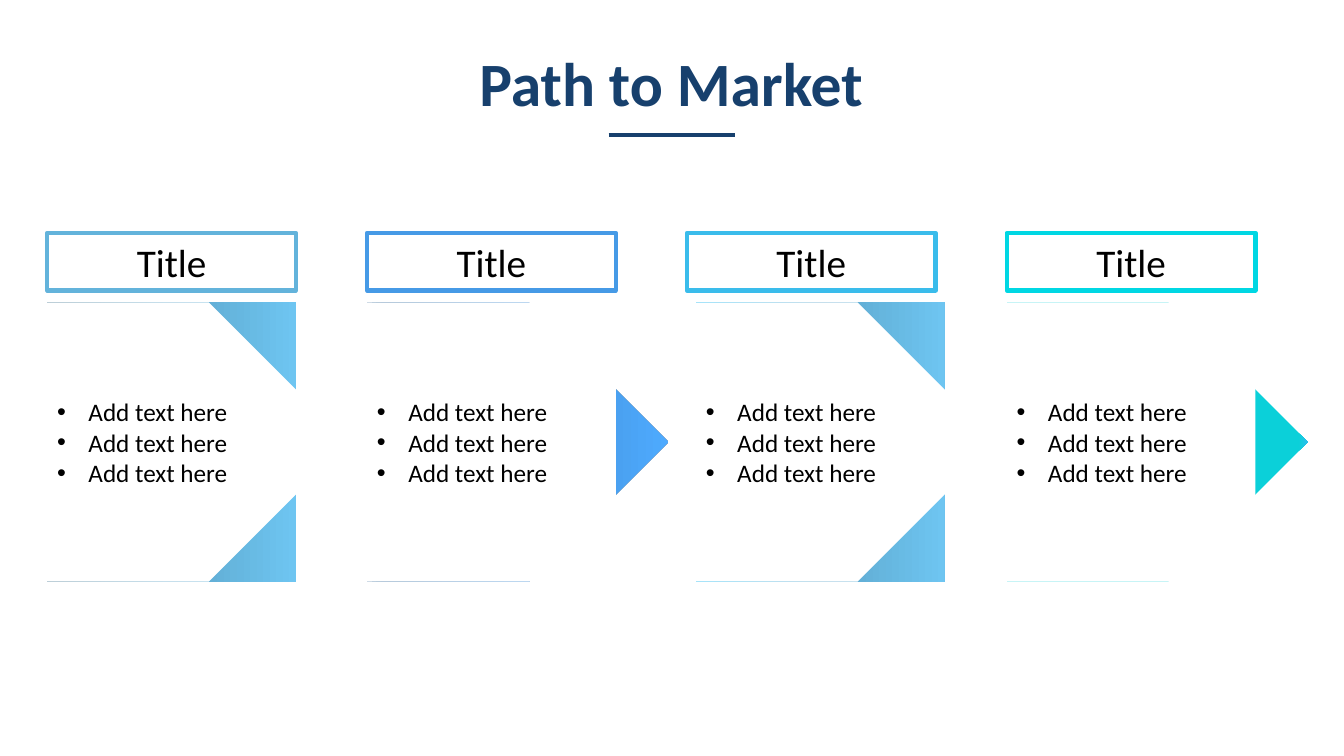
from lxml import etree
from pptx import Presentation
from pptx.dml.color import RGBColor
from pptx.enum.shapes import MSO_CONNECTOR, MSO_SHAPE
from pptx.enum.text import MSO_ANCHOR, MSO_AUTO_SIZE, PP_ALIGN
from pptx.oxml.ns import qn
from pptx.util import Cm, Pt

RECTANGLE, PENTAGON = MSO_SHAPE.RECTANGLE, MSO_SHAPE.PENTAGON
LEFT, CENTER = PP_ALIGN.LEFT, PP_ALIGN.CENTER
TOP, MIDDLE = MSO_ANCHOR.TOP, MSO_ANCHOR.MIDDLE

FONT = "Calibri"
COLORS = {"navy": "17406D", "black": "000000", "white": "FFFFFF"}

HEADING = "Path to Market"
BULLETS = ["Add text here"] * 3
# Each stage: title, border colour, body shift in cm, white cover shape, gradient stops
STAGES = [
    ("Title", "63B3DB", 0, PENTAGON, [(0, "41758F"), (50, "5DA6CB"), (100, "6EC5F1")]),
    ("Title", "469AE6", 0, RECTANGLE, [(0, "2E6596"), (50, "428FD6"), (100, "4EAAFE")]),
    ("Title", "3ABCEB", 0.23, PENTAGON, [(0, "00B0F0"), (50, "5DA6CB"), (100, "6EC5F1")]),
    ("Title", "00D7E3", 0, RECTANGLE, [(97, "0BD0D9"), (100, "2DBDEC"), (100, "4EAAFE")]),
]

FIRST_LEFT, PITCH = 1.19, 8.06
TITLE_TOP, TITLE_HEIGHT = 5.87, 1.45
BODY_TOP, BODY_HEIGHT = 7.62, 7.04
WIDTHS = {RECTANGLE: 6.27, PENTAGON: 7.59}
BULLET_INDENT = 0.79


def rgb(color):
    return RGBColor.from_string(color)


def add_run(paragraph, text, size, color, bold=False):
    run = paragraph.add_run()
    run.text = text
    run.font.name = FONT
    run.font.size = Pt(size)
    run.font.bold = bold
    run.font.color.rgb = rgb(color)


def add_plain_shape(slide, kind, left, top, height):
    """Add a shape without line or shadow, as wide as its kind requires."""
    shape = slide.shapes.add_shape(kind, Cm(left), Cm(top), Cm(WIDTHS[kind]), Cm(height))
    shape.shadow.inherit = False
    shape.line.fill.background()
    return shape


def fill_gradient(shape, stops):
    shape.fill.gradient()
    shape.fill.gradient_angle = 0
    stop_list = shape._element.spPr.find(qn("a:gradFill")).find(qn("a:gsLst"))
    for old_stop in list(stop_list):
        stop_list.remove(old_stop)
    for percent, color in stops:
        stop = etree.SubElement(stop_list, qn("a:gs"), pos=str(percent * 1000))
        etree.SubElement(stop, qn("a:srgbClr"), val=color)


def add_bullet(paragraph, text):
    paragraph.alignment = LEFT
    properties = paragraph._p.get_or_add_pPr()
    properties.set("marL", str(Cm(BULLET_INDENT)))
    properties.set("indent", str(-Cm(BULLET_INDENT)))
    etree.SubElement(properties, qn("a:buFont"), typeface="Arial")
    etree.SubElement(properties, qn("a:buChar"), char="•")
    add_run(paragraph, text, 18, COLORS["black"])


def add_heading(slide):
    box = slide.shapes.add_textbox(Cm(1.42), Cm(1.27), Cm(30.99), Cm(1.83))
    frame = box.text_frame
    frame.word_wrap = True
    frame.vertical_anchor = MIDDLE
    frame.margin_left = frame.margin_right = frame.margin_top = frame.margin_bottom = 0
    paragraph = frame.paragraphs[0]
    paragraph.alignment = CENTER
    paragraph.line_spacing = 0.9
    add_run(paragraph, HEADING, 44, COLORS["navy"], bold=True)


def add_heading_rule(slide):
    rule = slide.shapes.add_connector(
        MSO_CONNECTOR.STRAIGHT, Cm(15.34), Cm(3.4), Cm(18.52), Cm(3.4))
    rule.line.color.rgb = rgb(COLORS["navy"])
    rule.line.width = Pt(3)
    etree.SubElement(rule._element.spPr, qn("a:effectLst"))


def add_stage_title(slide, left, text, color):
    shape = add_plain_shape(slide, RECTANGLE, left, TITLE_TOP, TITLE_HEIGHT)
    shape.fill.background()
    shape.line.color.rgb = rgb(color)
    shape.line.width = Pt(3)
    frame = shape.text_frame
    frame.word_wrap = True
    frame.auto_size = MSO_AUTO_SIZE.SHAPE_TO_FIT_TEXT
    frame.vertical_anchor = TOP
    frame.paragraphs[0].alignment = CENTER
    add_run(frame.paragraphs[0], text, 28, COLORS["black"])


def add_stage_body(slide, left, cover_kind, stops):
    """Lay a white cover over a gradient shape, so only the arrow parts show."""
    back_kind = RECTANGLE if cover_kind == PENTAGON else PENTAGON
    back = add_plain_shape(slide, back_kind, left, BODY_TOP, BODY_HEIGHT)
    fill_gradient(back, stops)
    cover = add_plain_shape(slide, cover_kind, left, BODY_TOP, BODY_HEIGHT)
    cover.fill.solid()
    cover.fill.fore_color.rgb = rgb(COLORS["white"])
    frame = cover.text_frame
    frame.word_wrap = True
    frame.vertical_anchor = MIDDLE
    for index, text in enumerate(BULLETS):
        paragraph = frame.add_paragraph() if index else frame.paragraphs[0]
        add_bullet(paragraph, text)


def main():
    presentation = Presentation()
    presentation.slide_width = Cm(33.87)
    presentation.slide_height = Cm(19.05)
    slide = presentation.slides.add_slide(presentation.slide_layouts[6])
    add_heading(slide)
    for index, (title, border, shift, cover_kind, stops) in enumerate(STAGES):
        left = FIRST_LEFT + index * PITCH
        add_stage_body(slide, left + shift, cover_kind, stops)
        add_stage_title(slide, left, title, border)
    add_heading_rule(slide)
    presentation.save("out.pptx")


if __name__ == "__main__":
    main()
